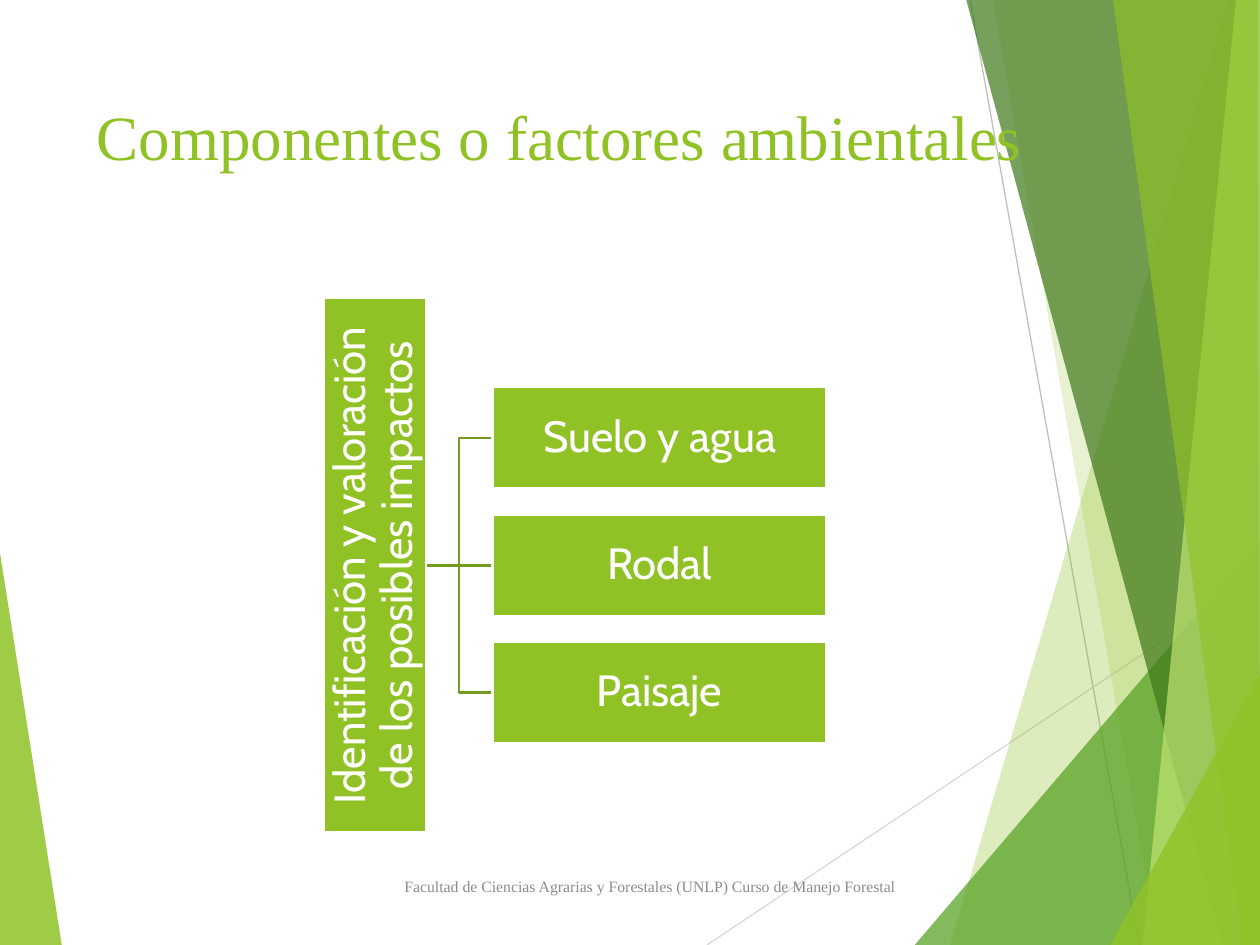
from lxml import etree
from pptx import Presentation
from pptx.dml.color import RGBColor
from pptx.enum import shapes, text
from pptx.oxml import ns
from pptx.util import Pt

HUES = {
    "lime": "90C226", "green": "54A021", "dark": "3F7819", "pale": "C0E474",
    "link": "739B1E", "white": "FFFFFF", "gray": "8C8C8C",
    "mist": "D9D9D9", "ash": "BFBFBF",
}
SERIF, SANS = "Times New Roman", "Cabin"

LEAF = ([(0, 316), (35.3, 540), (0, 540)], "lime", 85)
RAYS = [
    ((404, 540), (720, 329), "mist"),
    ((554.4, 0), (651, 540), "ash"),
]
FACETS = [
    ([(702, 0), (543, 540), (720, 540), (720, 0)], "lime", 30),
    ([(567.4, 0), (661.7, 540), (720, 540), (720, 0)], "lime", 20),
    ([(522.7, 540), (720, 309), (720, 540)], "green", 72),
    ([(552.2, 0), (698.4, 540), (720, 540), (720, 0)], "dark", 70),
    ([(706.3, 0), (653, 540), (720, 540), (720, 0)], "pale", 70),
    ([(636, 0), (710, 540), (720, 540), (718.6, 0)], "lime", 65),
    ([(634.5, 540), (720, 385), (720, 540)], "lime", 80),
]

ROOT = "Identificación y valoración de los posibles impactos"
ITEMS = ["Suelo y agua", "Rodal", "Paisaje"]
HIGH, STEP, MID = 58.2, 72.8, 323  # box height, row pitch, middle row centre
LEFT, WIDE, TALL = 281.5, 190.8, 305.3  # item left, item width, root length
STEM, BEND = 243.4, 262.4  # where the links start and turn


def hue(name):
    """Return a named colour."""
    return RGBColor.from_string(HUES[name])


def trace(slide, pts, close):
    """Add an outline through points."""
    first, *rest = [(Pt(x), Pt(y)) for x, y in pts]
    pen = slide.shapes.build_freeform(*first, scale=1.0)
    pen.add_line_segments(rest, close=close)
    form = pen.convert_to_shape()
    form.shadow.inherit = False
    return form


def facet(slide, pts, name, alpha):
    """Add a see-through polygon; alpha is percent."""
    form = trace(slide, pts, True)
    form.fill.solid()
    form.fill.fore_color.rgb = hue(name)
    form.line.fill.background()
    tint = form.fill._xPr.find(".//" + ns.qn("a:srgbClr"))
    etree.SubElement(tint, ns.qn("a:alpha"), val=str(alpha * 1000))


def ray(slide, start, end, name):
    """Add a thin straight line."""
    line = slide.shapes.add_connector(
        shapes.MSO_CONNECTOR.STRAIGHT, *map(Pt, start + end))
    line.line.color.rgb = hue(name)
    line.line.width = Pt(0.75)
    etree.SubElement(line._element.spPr, ns.qn("a:effectLst"))


def link(slide, y):
    """Join the root box to the item centred at y."""
    pts = [(STEM, MID), (LEFT, MID)]
    if y != MID:
        pts = [(STEM, MID), (BEND, MID), (BEND, y), (LEFT, y)]
    form = trace(slide, pts, False)
    form.fill.background()
    form.line.color.rgb = hue("link")
    form.line.width = Pt(1.5)


def write(par, words, font, size, name):
    """Add one run to a paragraph."""
    run = par.add_run()
    run.text = words
    run.font.name = font
    run.font.size = Pt(size)
    run.font.color.rgb = hue(name)


def box(slide, words, x, y, wide, turn=0):
    """Add a filled box with centred text, y being its centre."""
    rect = slide.shapes.add_shape(
        shapes.MSO_SHAPE.RECTANGLE,
        Pt(x), Pt(y - HIGH / 2), Pt(wide), Pt(HIGH))
    rect.rotation = turn
    rect.shadow.inherit = False
    rect.fill.solid()
    rect.fill.fore_color.rgb = hue("lime")
    rect.line.color.rgb = hue("white")
    rect.line.width = Pt(1.5)
    frame = rect.text_frame
    frame.word_wrap = True
    frame.vertical_anchor = text.MSO_ANCHOR.MIDDLE
    frame.margin_left = frame.margin_right = Pt(1.25)
    frame.margin_top = frame.margin_bottom = Pt(1.25)
    par = frame.paragraphs[0]
    par.alignment = text.PP_ALIGN.CENTER
    par.line_spacing = 0.9
    write(par, words, SANS, 25, "white")


def head(slide, words):
    """Place and fill the title."""
    title = slide.shapes.title
    title.left, title.top = Pt(48.2), Pt(48.2)
    title.width, title.height = Pt(584), Pt(63.4)
    frame = title.text_frame
    frame.word_wrap = True
    frame.auto_size = text.MSO_AUTO_SIZE.NONE
    frame.vertical_anchor = text.MSO_ANCHOR.TOP
    frame.margin_top = Pt(7.7)
    par = frame.paragraphs[0]
    par.alignment = text.PP_ALIGN.LEFT
    write(par, words, SERIF, 36, "lime")


def foot(slide, words):
    """Add the footer line."""
    note = slide.shapes.add_textbox(Pt(224), Pt(491.8), Pt(364), Pt(28.8))
    frame = note.text_frame
    frame.word_wrap = True
    frame.vertical_anchor = text.MSO_ANCHOR.MIDDLE
    write(frame.paragraphs[0], words, SERIF, 9, "gray")


def main():
    """Build and save the slide."""
    deck = Presentation()
    deck.slide_width, deck.slide_height = Pt(720), Pt(540)
    slide = deck.slides.add_slide(deck.slide_layouts[5])
    facet(slide, *LEAF)
    for args in RAYS:
        ray(slide, *args)
    for args in FACETS:
        facet(slide, *args)
    # The title lies above the backdrop.
    tree = slide.shapes._spTree
    tree.append(slide.shapes.title._element)
    head(slide, "Componentes o factores ambientales")
    rows = [MID + (i - 1) * STEP for i in range(len(ITEMS))]
    for y in reversed(rows):
        link(slide, y)
    box(slide, ROOT, STEM - (HIGH + TALL) / 2, MID, TALL, 270)
    for words, y in zip(ITEMS, rows):
        box(slide, words, LEFT, y, WIDE)
    foot(slide, "Facultad de Ciencias Agrarias y Forestales (UNLP) "
                "Curso de Manejo Forestal")
    deck.save("out.pptx")


main()
